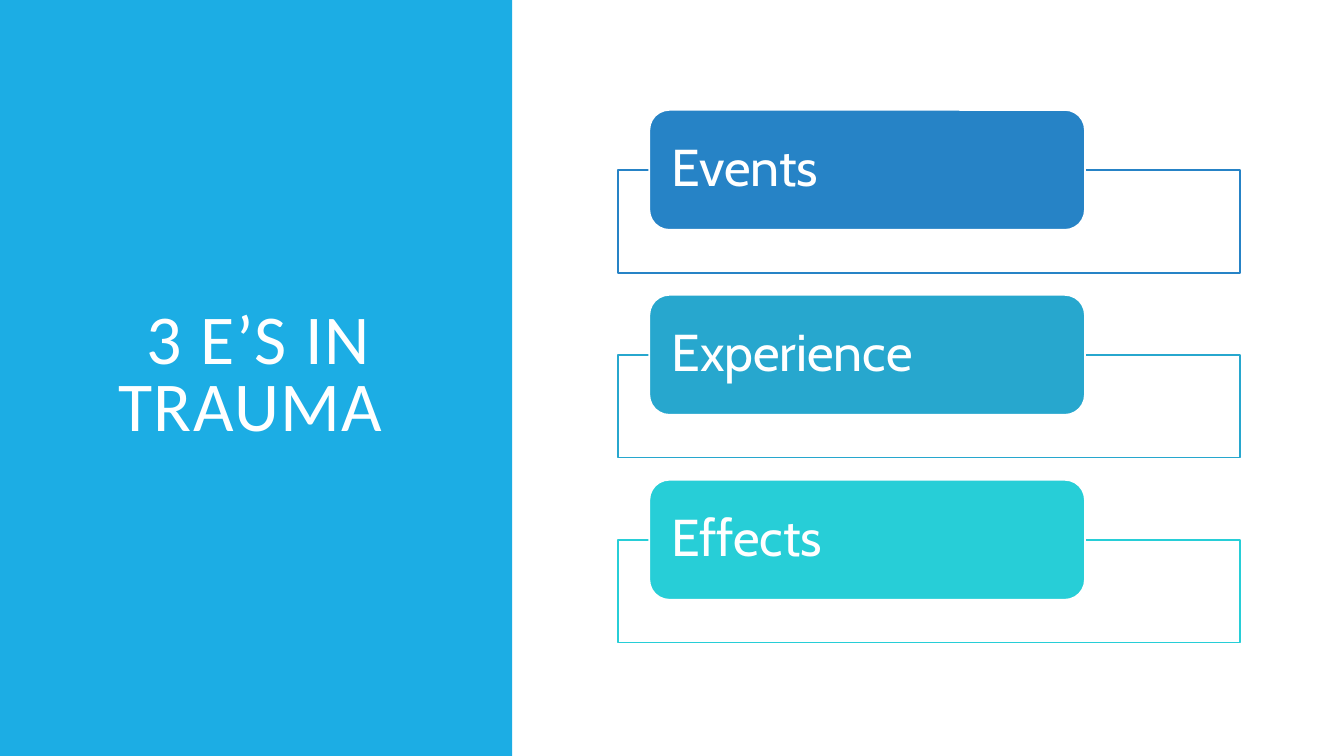
from lxml.etree import SubElement
from pptx import Presentation
from pptx.dml.color import RGBColor
from pptx.enum.shapes import MSO_SHAPE as Shape
from pptx.enum.text import MSO_ANCHOR as Anchor, PP_ALIGN as Align
from pptx.oxml.ns import qn
from pptx.util import Inches, Pt

COLORS = {
    "panel": "1CADE4",
    "white": "FFFFFF",
    "blue": "2683C6",
    "teal": "27A7CE",
    "aqua": "27CED7",
}
TITLE = "3 E’S IN TRAUMA "
ITEMS = [("Events", "blue"), ("Experience", "teal"), ("Effects", "aqua")]

FIRST_TOP = 1.09
ROW_STEP = 1.835
LABEL_LEFT, LABEL_WIDTH, LABEL_HEIGHT = 6.44, 4.32, 1.19
FRAME_LEFT, FRAME_WIDTH, FRAME_HEIGHT = 6.13, 6.17, 1.02
TEXT_MARGIN = 0.06


def color(name):
    return RGBColor.from_string(COLORS[name])


def add_box(slide, kind, bounds, fill, line=None):
    shape = slide.shapes.add_shape(kind, *map(Inches, bounds))
    shape.shadow.inherit = False
    shape.fill.solid()
    shape.fill.fore_color.rgb = color(fill)
    if line:
        shape.line.color.rgb = color(line)
        shape.line.width = Pt(1.25)
    else:
        shape.line.fill.background()
    return shape


def add_text(slide, bounds, text, font, size, spacing, align, inset):
    box = slide.shapes.add_textbox(*map(Inches, bounds))
    frame = box.text_frame
    frame.word_wrap = True
    frame.vertical_anchor = Anchor.MIDDLE
    frame.margin_left = frame.margin_right = Inches(inset[0])
    frame.margin_top = frame.margin_bottom = Inches(inset[1])
    paragraph = frame.paragraphs[0]
    paragraph.alignment = align
    paragraph.line_spacing = spacing
    run = paragraph.add_run()
    run.text = text
    run.font.name = font
    run.font.size = Pt(size)
    run.font.color.rgb = color("white")
    return run


def add_item(slide, top, label, accent):
    frame = add_box(
        slide, Shape.RECTANGLE,
        (FRAME_LEFT, top + LABEL_HEIGHT / 2, FRAME_WIDTH, FRAME_HEIGHT),
        "white", accent)
    fill_color = frame.fill._xPr.find(qn("a:solidFill"))[0]
    SubElement(fill_color, qn("a:alpha"), val="90000")
    add_box(
        slide, Shape.ROUNDED_RECTANGLE,
        (LABEL_LEFT, top, LABEL_WIDTH, LABEL_HEIGHT), accent, "white")
    add_text(
        slide,
        (LABEL_LEFT + TEXT_MARGIN, top + TEXT_MARGIN,
         LABEL_WIDTH - 2 * TEXT_MARGIN, LABEL_HEIGHT - 2 * TEXT_MARGIN),
        label, "Cabin", 37, 0.9, Align.LEFT, (0.16, 0))


def main():
    presentation = Presentation()
    presentation.slide_width = Inches(13.33)
    presentation.slide_height = Inches(7.5)
    slide = presentation.slides.add_slide(presentation.slide_layouts[6])

    add_box(slide, Shape.RECTANGLE, (0, 0, 5.08, 7.5), "panel")
    title = add_text(slide, (0.7, 0.7, 3.74, 6.09), TITLE,
                     "Calibri", 50, 0.8, Align.CENTER, (0.1, 0.05))
    title.font._element.set("spc", "100")

    for index, (label, accent) in enumerate(ITEMS):
        add_item(slide, FIRST_TOP + index * ROW_STEP, label, accent)

    presentation.save("out.pptx")


if __name__ == "__main__":
    main()
